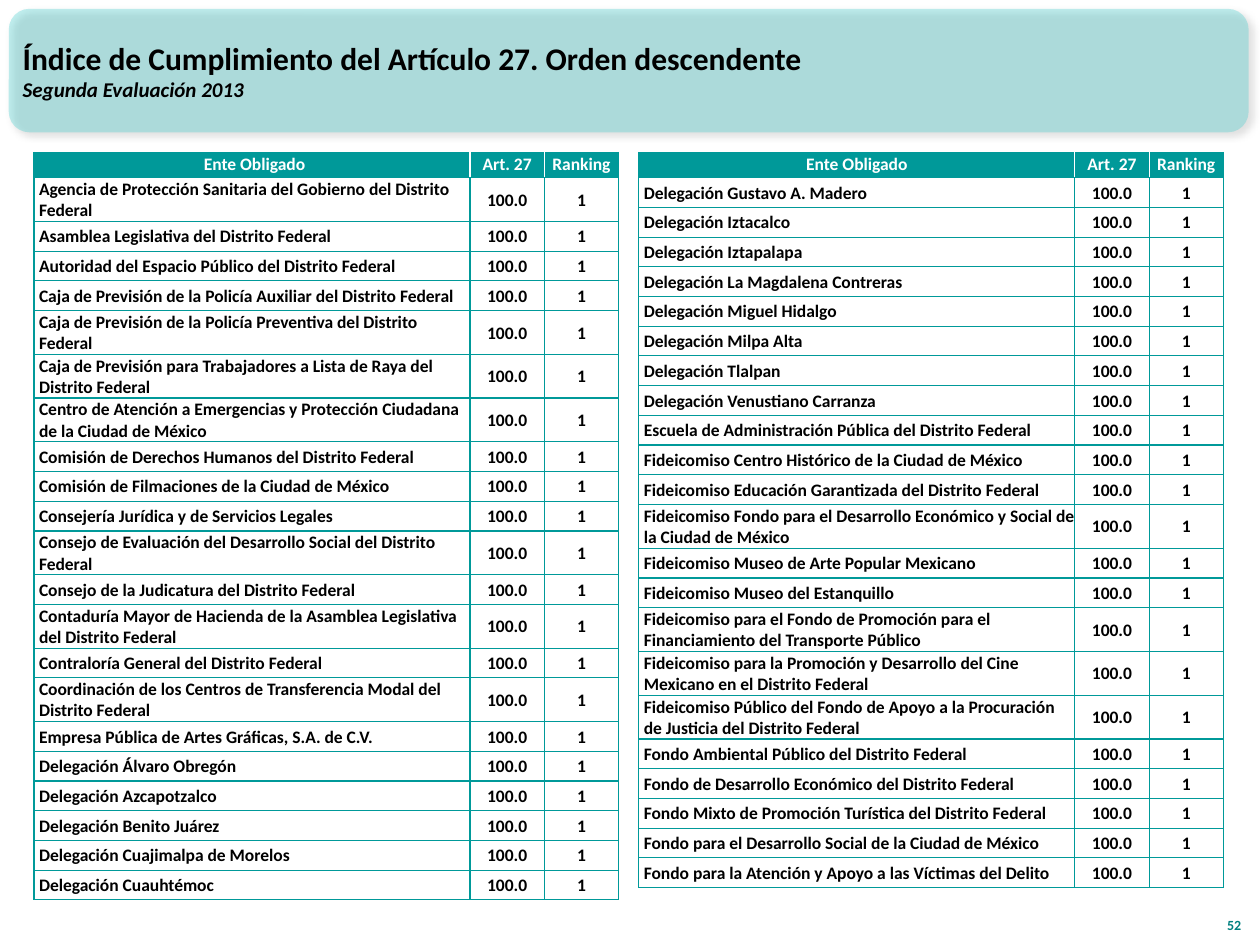
import pptx
import pptx.util
import pptx.dml.color
import pptx.enum.shapes
import pptx.enum.text
import pptx.oxml
import pptx.oxml.ns
from pptx.util import Inches

TEAL, WHITE, BLACK = "009999", "FFFFFF", "000000"
HEADERS = ["Ente Obligado", "Art. 27", "Ranking"]
LEFT_ENTITIES = [
    "Agencia de Protección Sanitaria del Gobierno del Distrito Federal",
    "Asamblea Legislativa del Distrito Federal",
    "Autoridad del Espacio Público del Distrito Federal",
    "Caja de Previsión de la Policía Auxiliar del Distrito Federal",
    "Caja de Previsión de la Policía Preventiva del Distrito Federal",
    "Caja de Previsión para Trabajadores a Lista de Raya del Distrito Federal",
    "Centro de Atención a Emergencias y Protección Ciudadana de la Ciudad de México",
    "Comisión de Derechos Humanos del Distrito Federal",
    "Comisión de Filmaciones de la Ciudad de México",
    "Consejería Jurídica y de Servicios Legales",
    "Consejo de Evaluación del Desarrollo Social del Distrito Federal",
    "Consejo de la Judicatura del Distrito Federal",
    "Contaduría Mayor de Hacienda de la Asamblea Legislativa del Distrito Federal",
    "Contraloría General del Distrito Federal",
    "Coordinación de los Centros de Transferencia Modal del Distrito Federal",
    "Empresa Pública de Artes Gráficas, S.A. de C.V.",
    "Delegación Álvaro Obregón",
    "Delegación Azcapotzalco",
    "Delegación Benito Juárez",
    "Delegación Cuajimalpa de Morelos",
    "Delegación Cuauhtémoc",
]
RIGHT_ENTITIES = [
    "Delegación Gustavo A. Madero",
    "Delegación Iztacalco",
    "Delegación Iztapalapa",
    "Delegación La Magdalena Contreras",
    "Delegación Miguel Hidalgo",
    "Delegación Milpa Alta",
    "Delegación Tlalpan",
    "Delegación Venustiano Carranza",
    "Escuela de Administración Pública del Distrito Federal",
    "Fideicomiso Centro Histórico de la Ciudad de México",
    "Fideicomiso Educación Garantizada del Distrito Federal",
    "Fideicomiso Fondo para el Desarrollo Económico y Social de la Ciudad de México",
    "Fideicomiso Museo de Arte Popular Mexicano",
    "Fideicomiso Museo del Estanquillo",
    "Fideicomiso para el Fondo de Promoción para el Financiamiento del Transporte Público",
    "Fideicomiso para la Promoción y Desarrollo del Cine Mexicano en el Distrito Federal",
    "Fideicomiso Público del Fondo de Apoyo a la Procuración de Justicia del Distrito Federal",
    "Fondo Ambiental Público del Distrito Federal",
    "Fondo de Desarrollo Económico del Distrito Federal",
    "Fondo Mixto de Promoción Turística del Distrito Federal",
    "Fondo para el Desarrollo Social de la Ciudad de México",
    "Fondo para la Atención y Apoyo a las Víctimas del Delito",
]


def rgb(color):
    return pptx.dml.color.RGBColor.from_string(color)


def xml(text):
    return pptx.oxml.parse_xml(text.replace(">", f" {pptx.oxml.ns.nsdecls('a')}>", 1))


class SlideBuilder:
    font = "Calibri"
    align = pptx.enum.text.PP_ALIGN
    anchor = pptx.enum.text.MSO_ANCHOR
    col_widths = [3.46, 0.59, 0.59]
    header_height, row_height = 0.2, 17 / 72

    def __init__(self, slide):
        self.s = slide

    def format(self, p, size, color, align, italic=None):
        p.alignment = align
        for r in p.runs:
            r.font.name, r.font.size = self.font, pptx.util.Pt(size)
            r.font.bold, r.font.italic = True, italic
            r.font.color.rgb = rgb(color)

    def banner(self, x, y, w, h):
        sp = self.s.shapes.add_shape(pptx.enum.shapes.MSO_SHAPE.ROUNDED_RECTANGLE,
                                     Inches(x), Inches(y), Inches(w), Inches(h))
        sp.fill.solid()
        sp.fill.fore_color.rgb = rgb("33CCCC")
        sp.line.fill.background()
        sp.shadow.inherit = False
        props = sp._element.spPr
        props.find(".//" + pptx.oxml.ns.qn("a:srgbClr")).append(xml('<a:alpha val="30000"></a:alpha>'))
        props.find(pptx.oxml.ns.qn("a:effectLst")).append(xml(
            '<a:outerShdw blurRad="50800" dist="38100" dir="2700000" algn="tl" rotWithShape="0">'
            '<a:srgbClr val="000000"><a:alpha val="40000"/></a:srgbClr></a:outerShdw>'))
        # Send behind the title
        self.s.shapes._spTree.insert(2, sp._element)

    def title(self, title, subtitle, x, y, w, h):
        sp = self.s.shapes.title
        sp.left, sp.top, sp.width, sp.height = Inches(x), Inches(y), Inches(w), Inches(h)
        tf = sp.text_frame
        tf.text = f"{title}\n{subtitle}"
        tf.word_wrap = True
        tf.auto_size = pptx.enum.text.MSO_AUTO_SIZE.NONE
        tf.vertical_anchor = self.anchor.MIDDLE
        self.format(tf.paragraphs[0], 18, BLACK, self.align.LEFT)
        self.format(tf.paragraphs[1], 12, BLACK, self.align.LEFT, italic=True)

    def page_number(self, number, x, y, w, h):
        tf = self.s.shapes.add_textbox(Inches(x), Inches(y), Inches(w), Inches(h)).text_frame
        tf.text = number
        tf.word_wrap = True
        tf.vertical_anchor = self.anchor.BOTTOM
        self.format(tf.paragraphs[0], 8, "008080", self.align.RIGHT)

    def borders(self, cell, left, right):
        sides = {"L": left, "R": right, "T": TEAL, "B": TEAL}
        for i, (side, color) in enumerate(sides.items()):
            cell._tc.get_or_add_tcPr().insert(i, xml(
                f'<a:ln{side} w="9525"><a:solidFill><a:srgbClr val="{color}"/></a:solidFill></a:ln{side}>'))

    def cell(self, cell, text, col, header, indent):
        cell.text = text
        cell.vertical_anchor = self.anchor.MIDDLE
        side = 0 if header else 0.01
        cell.margin_left = Inches(indent if col == 0 else side)
        cell.margin_right = Inches(0 if col == 0 else side)
        cell.margin_top = Inches(side)
        cell.margin_bottom = 0
        if header:
            cell.fill.solid()
            cell.fill.fore_color.rgb = rgb(TEAL)
        else:
            cell.fill.background()
        last = len(self.col_widths) - 1
        self.borders(cell, WHITE if header and col > 0 else TEAL,
                     WHITE if header and col < last else TEAL)
        align = self.align.CENTER if header or col else self.align.LEFT
        self.format(cell.text_frame.paragraphs[0], 10, WHITE if header else BLACK, align)

    def ranking_table(self, entities, x, y, header_indent):
        rows = [HEADERS] + [[name, "100.0", "1"] for name in entities]
        heights = [self.header_height] + [self.row_height] * len(entities)
        table = self.s.shapes.add_table(len(rows), len(HEADERS), Inches(x), Inches(y),
                                        Inches(sum(self.col_widths)), Inches(sum(heights))).table
        table.first_row = table.horz_banding = False
        for column, width in zip(table.columns, self.col_widths):
            column.width = Inches(width)
        for i, (values, height) in enumerate(zip(rows, heights)):
            table.rows[i].height = Inches(height)
            for col, text in enumerate(values):
                self.cell(table.cell(i, col), text, col, header=i == 0,
                          indent=0.04 if i else header_indent)


def main():
    prs = pptx.Presentation()
    prs.slide_width, prs.slide_height = Inches(10), Inches(7.5)
    builder = SlideBuilder(prs.slides.add_slide(prs.slide_layouts[5]))

    # Heading
    builder.banner(0.07, 0.07, 9.84, 0.98)
    builder.title("Índice de Cumplimiento del Artículo 27. Orden descendente",
                  "Segunda Evaluación 2013", 0.08, 0.09, 9.17, 0.94)

    # Ranking tables
    builder.ranking_table(LEFT_ENTITIES, 0.27, 1.21, header_indent=0.04)
    builder.ranking_table(RIGHT_ENTITIES, 5.07, 1.21, header_indent=0)

    # Footer
    builder.page_number("52", 9.55, 7.06, 0.4, 0.4)
    prs.save("out.pptx")


if __name__ == "__main__":
    main()
